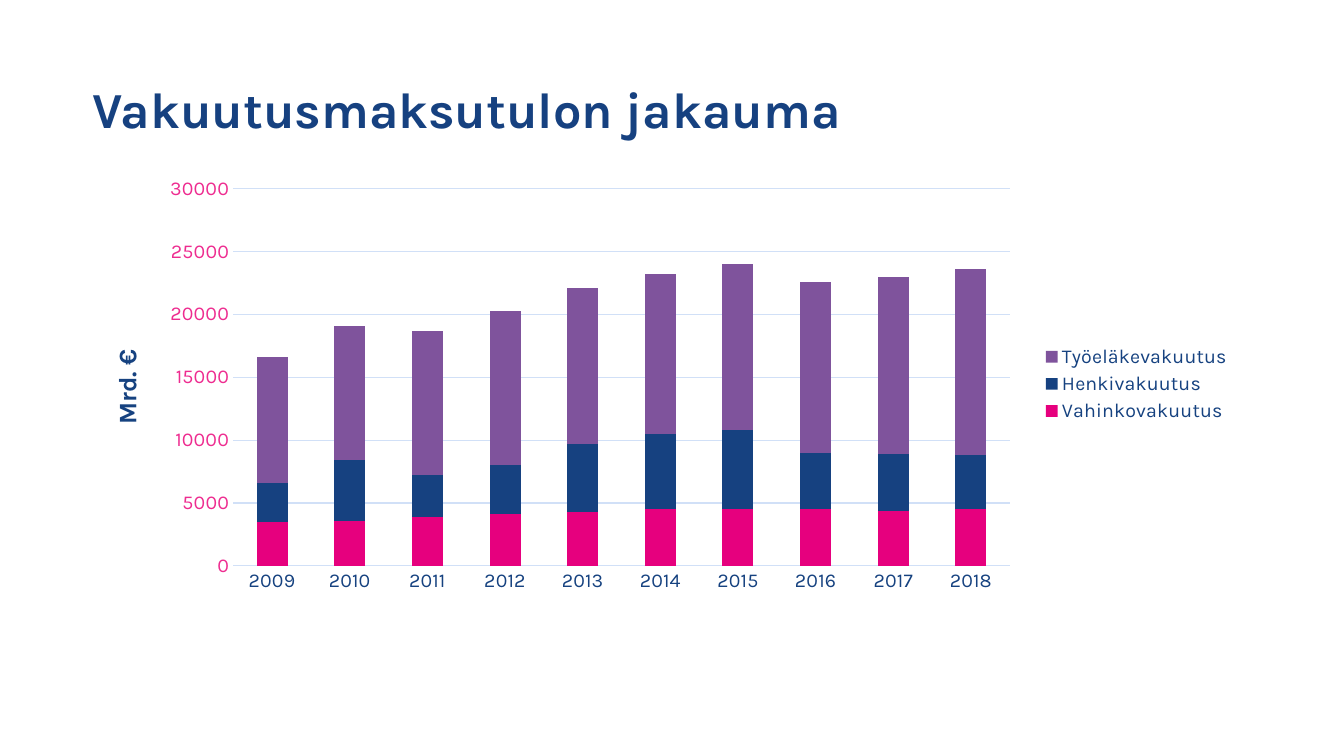
import pptx
import pptx.chart.data
import pptx.dml.color
import pptx.enum.chart
import pptx.enum.text
import pptx.oxml
import pptx.oxml.ns
import pptx.util

Pt = pptx.util.Pt
RGBColor = pptx.dml.color.RGBColor
NAVY = RGBColor(0x16, 0x41, 0x80)
LABEL_BLUE = RGBColor(0x16, 0x42, 0x80)
PINK = RGBColor(0xEE, 0x2C, 0x90)
MAGENTA = RGBColor(0xE6, 0x00, 0x7E)
PURPLE = RGBColor(0x7F, 0x53, 0x9C)
PALE_BLUE = RGBColor(0xD1, 0xE0, 0xF7)

YEARS = [str(year) for year in range(2009, 2019)]
PREMIUMS = [
    ("Vahinkovakuutus", MAGENTA,
     [3500, 3600, 3900, 4100, 4300, 4500, 4500, 4500, 4400, 4500]),
    ("Henkivakuutus", NAVY,
     [3100, 4800, 3300, 3900, 5400, 6000, 6300, 4500, 4500, 4300]),
    ("Työeläkevakuutus", PURPLE,
     [10000, 10700, 11500, 12300, 12400, 12700, 13200, 13600, 14100, 14800]),
]


class PageBuilder:
    """Holds the style and the current slide."""

    font_name = "Karla"

    def __init__(self, page):
        self.page = page

    def style_font(self, font, size, color, bold=False):
        font.name = self.font_name
        font.size = Pt(size)
        font.bold = bold
        font.color.rgb = color

    def style_line(self, line):
        line.color.rgb = PALE_BLUE
        line.width = Pt(0.75)

    def place(self, element, index, **fractions):
        """Set a manual layout, in fractions of the chart area."""
        for layout in element.findall(pptx.oxml.ns.qn("c:layout")):
            element.remove(layout)
        target = '<c:layoutTarget val="inner"/>' if "w" in fractions else ""
        modes = "".join(f'<c:{key}Mode val="edge"/>' for key in "xy")
        values = "".join(f'<c:{key} val="{value}"/>' for key, value in fractions.items())
        element.insert(index, pptx.oxml.parse_xml(
            f'<c:layout {pptx.oxml.ns.nsdecls("c")}><c:manualLayout>'
            f'{target}{modes}{values}</c:manualLayout></c:layout>'))

    def heading(self, text, left, top, width, height):
        box = self.page.shapes.add_textbox(Pt(left), Pt(top), Pt(width), Pt(height))
        frame = box.text_frame
        frame.word_wrap = True
        frame.vertical_anchor = pptx.enum.text.MSO_ANCHOR.MIDDLE
        frame.text = text
        para = frame.paragraphs[0]
        para.line_spacing = 0.9
        self.style_font(para.runs[0].font, 36, NAVY, bold=True)

    def stacked_columns(self, categories, series_rows, left, top, width, height):
        data = pptx.chart.data.CategoryChartData()
        data.categories = categories
        for name, _, values in series_rows:
            data.add_series(name, values)
        chart = self.page.shapes.add_chart(
            pptx.enum.chart.XL_CHART_TYPE.COLUMN_STACKED,
            Pt(left), Pt(top), Pt(width), Pt(height), data).chart
        chart.has_title = False
        self.style_font(chart.font, 14, LABEL_BLUE)

        plot = chart.plots[0]
        plot.gap_width = 150
        plot.overlap = 100
        plot.vary_by_categories = False
        for series, (_, color, _) in zip(plot.series, series_rows):
            series.format.fill.solid()
            series.format.fill.fore_color.rgb = color

        chart.has_legend = True
        chart.legend.position = pptx.enum.chart.XL_LEGEND_POSITION.RIGHT
        chart.legend.include_in_layout = False
        self.style_font(chart.legend.font, 14, LABEL_BLUE)
        self.place(chart._chartSpace.chart.plotArea, 0, x=0.13, y=0.05, w=0.67, h=0.87)
        return chart

    def axes(self, chart, value_title, maximum, step):
        for axis, color in ((chart.category_axis, LABEL_BLUE), (chart.value_axis, PINK)):
            axis.major_tick_mark = pptx.enum.chart.XL_TICK_MARK.NONE
            axis.minor_tick_mark = pptx.enum.chart.XL_TICK_MARK.NONE
            self.style_font(axis.tick_labels.font, 14, color)
        self.style_line(chart.category_axis.format.line)

        value_axis = chart.value_axis
        value_axis.minimum_scale = 0
        value_axis.maximum_scale = maximum
        value_axis.major_unit = step
        value_axis.format.line.fill.background()
        value_axis.has_major_gridlines = True
        self.style_line(value_axis.major_gridlines.format.line)

        # Axis title, turned to read upwards
        title = value_axis.axis_title
        title.text_frame.text = value_title
        span = title.text_frame.paragraphs[0].runs[0]
        self.style_font(span.font, 18, LABEL_BLUE, bold=True)
        body = title._element.find(".//" + pptx.oxml.ns.qn("a:bodyPr"))
        body.set("rot", "-5400000")
        body.set("vert", "horz")
        self.place(title._element, 1, x=0.02, y=0.41)


def main():
    deck = pptx.Presentation()
    deck.slide_width = Pt(960)
    deck.slide_height = Pt(540)
    builder = PageBuilder(deck.slides.add_slide(deck.slide_layouts[6]))

    # Heading
    builder.heading("Vakuutusmaksutulon jakauma", 59, 28, 828, 104.5)

    # Premium income by insurance line
    chart = builder.stacked_columns(YEARS, PREMIUMS, 59, 119.5, 828, 309.5)
    builder.axes(chart, "Mrd. €", maximum=30000, step=5000)

    deck.save("out.pptx")


if __name__ == "__main__":
    main()
